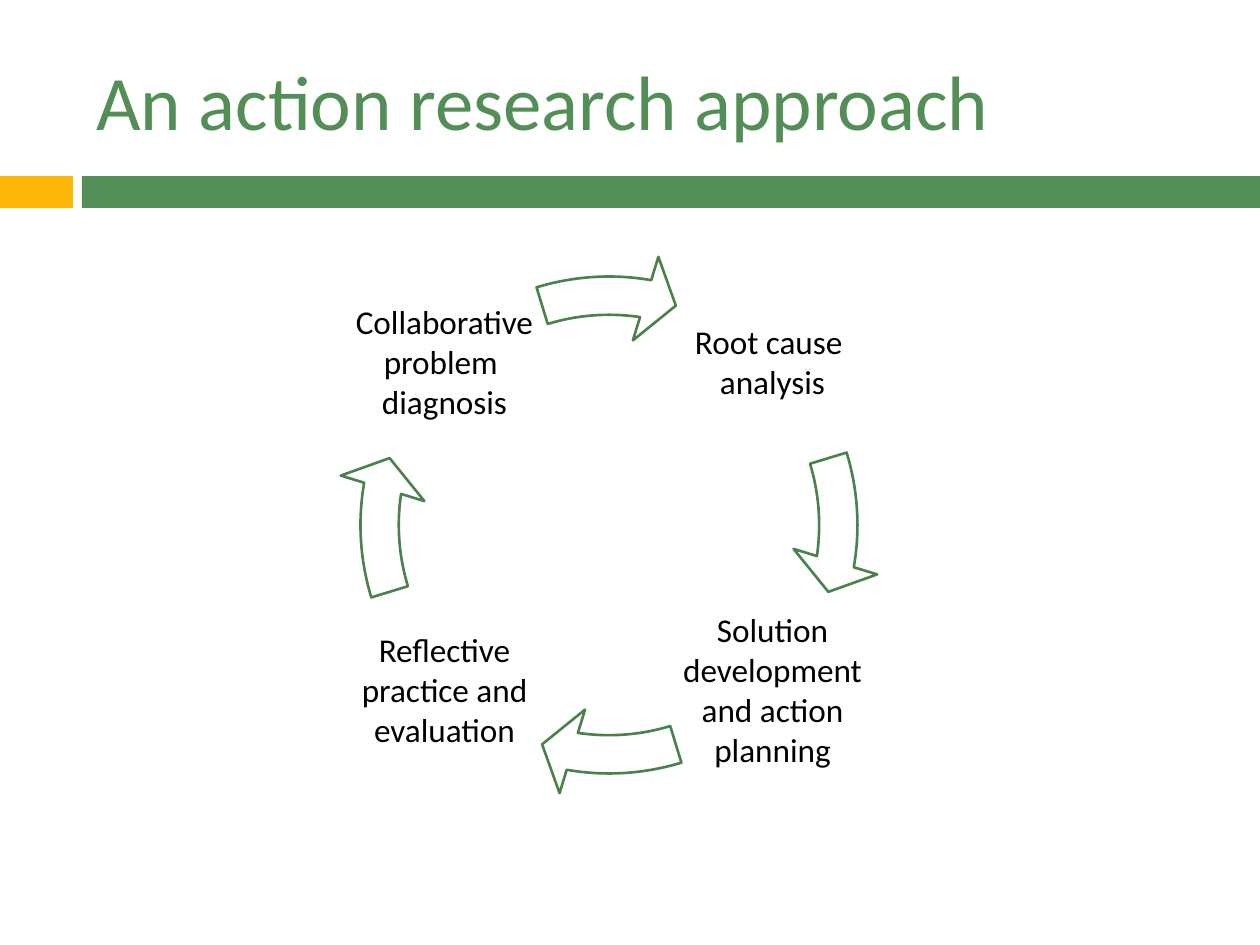
import pptx
import pptx.util
import pptx.dml.color
import pptx.enum.shapes
import pptx.enum.text

RGBColor = pptx.dml.color.RGBColor
Shape = pptx.enum.shapes.MSO_SHAPE
Align = pptx.enum.text.PP_ALIGN

GREEN = RGBColor(0x52, 0x8E, 0x55)
DARK_GREEN = RGBColor(0x4A, 0x81, 0x4D)
YELLOW = RGBColor(0xFE, 0xB8, 0x0A)
WHITE = RGBColor(0xFF, 0xFF, 0xFF)
BLACK = RGBColor(0, 0, 0)

TITLE = "An action research approach"
TITLE_BOX = (84, 32, 1124, 136)
BANDS = [((0, 176, 73, 32), YELLOW), ((82, 176, 1178, 32), GREEN)]
STAGES = [
    ("Root cause \nanalysis", 1, 0),
    ("Solution development and action planning", 1, 1),
    ("Reflective\npractice and evaluation", 0, 1),
    ("Collaborative problem \ndiagnosis", 0, 0),
]
STAGE_LEFT, STAGE_TOP, STAGE_SIZE, STAGE_STEP = 348, 265, 193, 328
RING = (336, 252, 546, 546)
ARROW_THICKNESS, ARROW_HEAD_ANGLE, ARROW_HEAD_WIDTH = 0.07, 4.65, 0.08
ARROW_END, ARROW_START = 5.52, 205.83
FULL_TURN = 216

PX = pptx.util.Inches(1) / 126


def emu(box):
    return [round(length * PX) for length in box]


def add_filled(slide, kind, box, color):
    shape = slide.shapes.add_shape(kind, *emu(box))
    shape.shadow.inherit = False
    shape.fill.solid()
    shape.fill.fore_color.rgb = color
    shape.line.fill.background()
    return shape


def add_words(slide, words, box, size, color, align, frame_format, space_after=0):
    frame = slide.shapes.add_textbox(*emu(box)).text_frame
    frame_format = {
        "word_wrap": True,
        "vertical_anchor": pptx.enum.text.MSO_ANCHOR.MIDDLE,
        **frame_format,
    }
    for name, value in frame_format.items():
        setattr(frame, name, value)
    paragraph = frame.paragraphs[0]
    paragraph.text = words
    paragraph.alignment = align
    paragraph.space_after = pptx.util.Pt(space_after)
    for run in paragraph.runs:
        for name, value in {"name": "Calibri", "size": pptx.util.Pt(size)}.items():
            setattr(run.font, name, value)
        run.font.color.rgb = color


def add_cycle(slide):
    margins = {f"margin_{side}": round(4 * PX) for side in ("left", "top", "right", "bottom")}
    quarter = FULL_TURN / len(STAGES)
    for index, (words, column, row) in enumerate(STAGES):
        box = (STAGE_LEFT + column * STAGE_STEP, STAGE_TOP + row * STAGE_STEP,
               STAGE_SIZE, STAGE_SIZE)
        add_words(slide, words, box, 19, BLACK, Align.CENTER, margins, 10)
        arrow = add_filled(slide, Shape.CIRCULAR_ARROW, RING, WHITE)
        arrow.line.color.rgb = DARK_GREEN
        arrow.line.width = pptx.util.Pt(1.5)
        turn = index * quarter
        bends = (ARROW_THICKNESS, ARROW_HEAD_ANGLE, ARROW_END + turn,
                 (ARROW_START + turn) % FULL_TURN, ARROW_HEAD_WIDTH)
        for position, bend in enumerate(bends):
            arrow.adjustments[position] = bend


def main():
    deck = pptx.Presentation()
    deck.slide_width, deck.slide_height = emu((1260, 945))
    slide = deck.slides.add_slide(deck.slide_layouts[6])
    for box, color in BANDS:
        add_filled(slide, Shape.RECTANGLE, box, color)
    add_words(slide, TITLE, TITLE_BOX, 44, GREEN, Align.LEFT, {})
    add_cycle(slide)
    deck.save("out.pptx")


if __name__ == "__main__":
    main()
